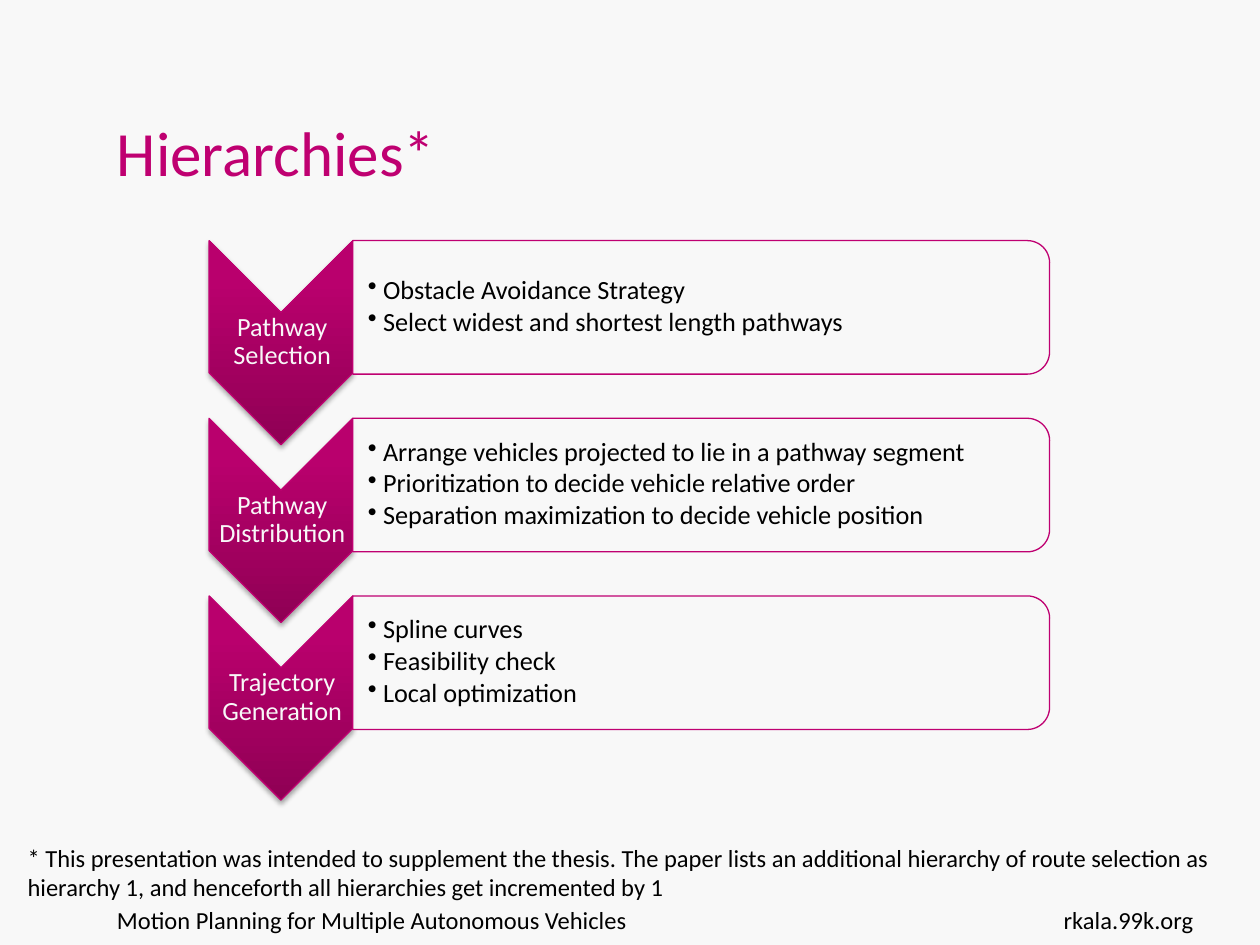
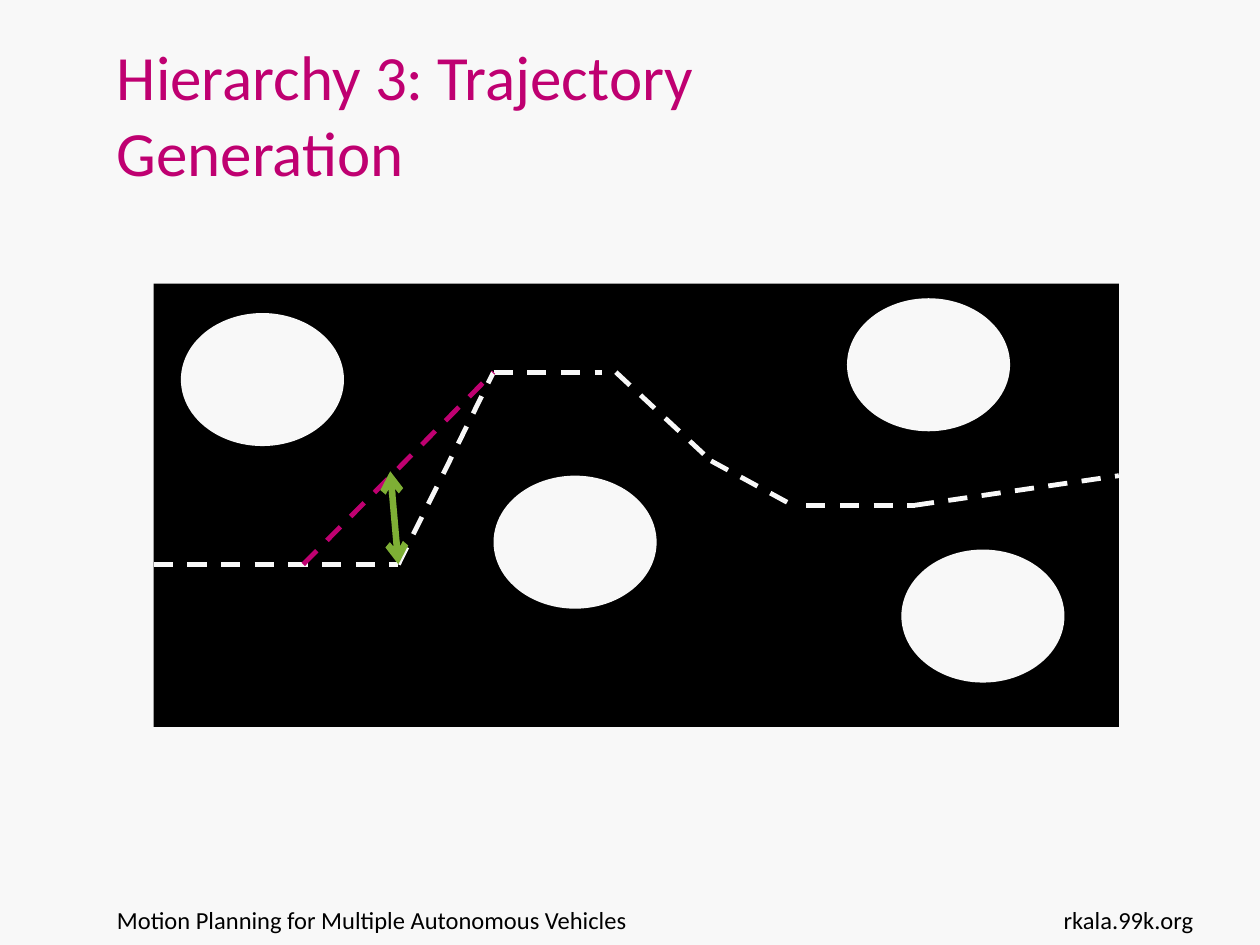
from dataclasses import dataclass
from typing import NamedTuple

from lxml import etree
from pptx import Presentation
from pptx import util as u
from pptx.dml.color import RGBColor
from pptx.enum import dml, shapes, text
from pptx.oxml import parse_xml
from pptx.oxml.ns import nsdecls, qn


# Theme and grids
@dataclass(frozen=True)
class Theme:
    font: str = "Calibri"
    paper: str = "F8F8F8"
    ink: str = "000000"
    accent: str = "BF0071"
    arrow: str = "7EAF35"
    gradient: tuple = ((0, "8F0054"), (80, "B9006D"), (100, "BA006E"))
    title_size: float = 36
    step_size: float = 15
    small_size: float = 14
    outline: float = 0.75
    route: float = 2.75
    arrow_width: float = 3.75


class Box(NamedTuple):
    """Left, top, width and height in grid columns and rows."""
    left: float
    top: float
    width: float
    height: float


@dataclass(frozen=True)
class Grid:
    left: float
    top: float
    column: float
    row: float

    def x(self, column: float) -> int:
        return u.Inches(self.left + column * self.column)

    def y(self, row: float) -> int:
        return u.Inches(self.top + row * self.row)

    def place(self, box: Box) -> tuple:
        return (self.x(box.left), self.y(box.top),
                u.Inches(box.width * self.column), u.Inches(box.height * self.row))


class Step(NamedTuple):
    name: str
    points: list


class Leg(NamedTuple):
    start: tuple
    end: tuple
    color: str


THEME = Theme()
WIDTH, HEIGHT = 10, 7.5
PAGE = Grid(0, 0, WIDTH / 100, HEIGHT / 75)
MAP_COLUMNS, MAP_ROWS = 71, 30
MAP = Grid(1.22, 2.25, 7.66 / MAP_COLUMNS, 3.52 / MAP_ROWS)

# Content
STEPS = [
    Step("Pathway Selection",
         ["Obstacle Avoidance Strategy", "Select widest and shortest length pathways"]),
    Step("Pathway Distribution",
         ["Arrange vehicles projected to lie in a pathway segment",
          "Prioritization to decide vehicle relative order",
          "Separation maximization to decide vehicle position"]),
    Step("Trajectory Generation",
         ["Spline curves", "Feasibility check", "Local optimization"]),
]
NOTE = ("* This presentation was intended to supplement the thesis. The paper lists an "
        "additional hierarchy of route selection as hierarchy 1, and henceforth all "
        "hierarchies get incremented by 1")
OBSTACLES = [(51, 1), (25, 13), (55, 18), (2, 2)]
ROUTE = [
    Leg((0, 19), (18, 19), THEME.paper),
    Leg((18, 19), (25, 6), THEME.paper),
    Leg((25, 6), (33, 6), THEME.paper),
    Leg((34, 6), (41, 12), THEME.paper),
    Leg((41, 12), (47, 15), THEME.paper),
    Leg((48, 15), (56, 15), THEME.paper),
    Leg((56, 15), (MAP_COLUMNS, 13), THEME.paper),
    Leg((11, 19), (25, 6), THEME.accent),
]


# Drawing helpers
def rgb(color: str) -> RGBColor:
    return RGBColor.from_string(color)


def add_text(page, box: Box, lines, *, size: float, color: str = THEME.ink,
             align=text.PP_ALIGN.LEFT, anchor=text.MSO_ANCHOR.TOP,
             insets: tuple = (0.1, 0.05, 0.1, 0.05), spacing: float = 1,
             after: float = 0, bullet: bool = False):
    frame = page.shapes.add_textbox(*PAGE.place(box)).text_frame
    frame.word_wrap = True
    frame.vertical_anchor = anchor
    (frame.margin_left, frame.margin_top,
     frame.margin_right, frame.margin_bottom) = map(u.Inches, insets)
    for index, line in enumerate([lines] if isinstance(lines, str) else lines):
        para = frame.paragraphs[0] if index == 0 else frame.add_paragraph()
        para.alignment = align
        para.line_spacing = spacing
        para.space_after = u.Pt(after)
        if bullet:
            properties = para._p.get_or_add_pPr()
            properties.set("marL", str(u.Inches(0.12)))
            properties.set("indent", str(-u.Inches(0.12)))
            etree.SubElement(properties, qn("a:buChar"), char="•")
        span = para.add_run()
        span.text = line
        span.font.name = THEME.font
        span.font.size = u.Pt(size)
        span.font.color.rgb = rgb(color)


def add_shape(page, grid: Grid, kind, box: Box, *, fill: str, line: str | None = None):
    shape = page.shapes.add_shape(kind, *grid.place(box))
    shape.shadow.inherit = False
    shape.fill.solid()
    shape.fill.fore_color.rgb = rgb(fill)
    if line:
        shape.line.color.rgb = rgb(line)
        shape.line.width = u.Pt(THEME.outline)
    else:
        shape.line.fill.background()
    return shape


def add_turned(page, kind, seen: Box, fill: str):
    """Draw a shape turned by a quarter so that it covers the box as seen."""
    shift = (seen.width - seen.height) / 2
    box = Box(seen.left + shift, seen.top - shift, seen.height, seen.width)
    shape = add_shape(page, PAGE, kind, box, fill=fill, line=THEME.accent)
    shape.rotation = 90
    return shape


def add_line(page, leg: Leg, *, width: float, dashed: bool = False, heads: bool = False):
    (left, top), (right, bottom) = leg.start, leg.end
    line = page.shapes.add_connector(shapes.MSO_CONNECTOR.STRAIGHT, MAP.x(left), MAP.y(top),
                                     MAP.x(right), MAP.y(bottom))
    line.line.color.rgb = rgb(leg.color)
    line.line.width = u.Pt(width)
    if dashed:
        line.line.dash_style = dml.MSO_LINE.DASH
    if heads:
        for end in ("a:headEnd", "a:tailEnd"):
            etree.SubElement(line.line._get_or_add_ln(), qn(end), type="arrow")
    etree.SubElement(line._element.spPr, qn("a:effectLst"))


def shade(chevron):
    """Give a chevron its upright gradient and soft shadow."""
    stops = "".join(f'<a:gs pos="{place * 1000}"><a:srgbClr val="{color}"/></a:gs>'
                    for place, color in THEME.gradient)
    gradient = parse_xml(f'<a:gradFill {nsdecls("a")} rotWithShape="0"><a:gsLst>{stops}</a:gsLst>'
                         '<a:lin ang="16200000" scaled="0"/></a:gradFill>')
    properties = chevron._element.spPr
    properties.replace(properties.find(qn("a:solidFill")), gradient)
    shadow = parse_xml(f'<a:outerShdw {nsdecls("a")} blurRad="{u.Pt(3.1)}" dist="{u.Pt(1.8)}" '
                       'dir="5400000" rotWithShape="0"><a:srgbClr val="000000">'
                       '<a:alpha val="35000"/></a:srgbClr></a:outerShdw>')
    properties.find(qn("a:effectLst")).append(shadow)


# Slides
def add_page(deck, title: str):
    page = deck.slides.add_slide(deck.slide_layouts[6])
    page.background.fill.solid()
    page.background.fill.fore_color.rgb = rgb(THEME.paper)
    add_text(page, Box(8.3, 71.3, 69.3, 5.2), "Motion Planning for Multiple Autonomous Vehicles",
             size=THEME.small_size)
    add_text(page, Box(8.3, 3, 67.7, 12.5), title, size=THEME.title_size,
             color=THEME.accent, anchor=text.MSO_ANCHOR.BOTTOM)
    add_text(page, Box(80.7, 71.3, 15, 5.2), "rkala.99k.org", size=THEME.small_size,
             align=text.PP_ALIGN.RIGHT)
    return page


def add_step(page, step: Step, top: float):
    chevron = add_turned(page, shapes.MSO_SHAPE.CHEVRON, Box(16.6, top, 11.4, 16.2), THEME.accent)
    shade(chevron)
    add_text(page, Box(16.7, top + 5.6, 11.4, 4.9), step.name, size=THEME.step_size,
             color=THEME.paper, align=text.PP_ALIGN.CENTER, anchor=text.MSO_ANCHOR.MIDDLE,
             insets=(0.01,) * 4, spacing=0.9)
    panel = add_turned(page, shapes.MSO_SHAPE.ROUND_2_SAME_RECTANGLE,
                       Box(28, top, 55.3, 10.6), THEME.paper)
    color = panel._element.spPr.find(qn("a:solidFill"))[0]
    etree.SubElement(color, qn("a:alpha"), val="90000")
    add_text(page, Box(28, top + 0.5, 54.8, 9.5), step.points, size=THEME.step_size,
             anchor=text.MSO_ANCHOR.MIDDLE, insets=(0.12, 0.01, 0.01, 0.01),
             spacing=0.9, after=2, bullet=True)


def add_hierarchies(deck):
    page = add_page(deck, "Hierarchies*")
    for index, step in enumerate(STEPS):
        add_step(page, step, 19.1 + index * 14.1)
    add_text(page, Box(1.2, 66.4, 96.9, 5.7), NOTE, size=THEME.small_size)


def add_trajectory(deck):
    page = add_page(deck, "Hierarchy 3: Trajectory Generation")
    add_shape(page, MAP, shapes.MSO_SHAPE.RECTANGLE, Box(0, 0, MAP_COLUMNS, MAP_ROWS),
              fill=THEME.ink)
    for column, row in OBSTACLES:
        add_shape(page, MAP, shapes.MSO_SHAPE.OVAL, Box(column, row, 12, 9), fill=THEME.paper)
    for leg in ROUTE:
        add_line(page, leg, width=THEME.route, dashed=True)
    add_line(page, Leg((18, 19), (17.4, 12.7), THEME.arrow), width=THEME.arrow_width, heads=True)


def main():
    deck = Presentation()
    deck.slide_width, deck.slide_height = u.Inches(WIDTH), u.Inches(HEIGHT)
    add_hierarchies(deck)
    add_trajectory(deck)
    deck.save("out.pptx")


if __name__ == "__main__":
    main()
